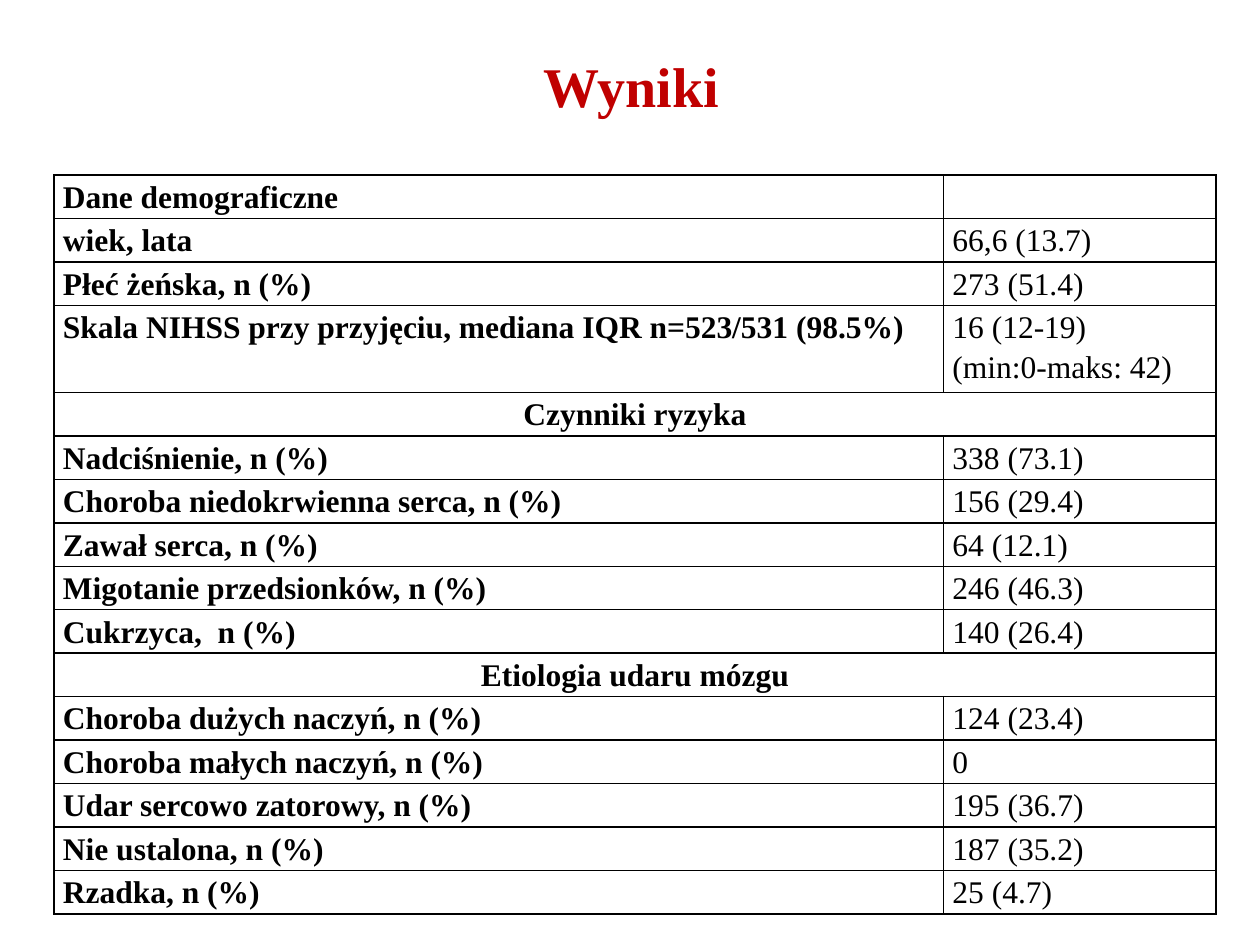
from lxml import etree
from pptx import Presentation
from pptx.dml.color import RGBColor
from pptx.enum import text
from pptx.oxml.ns import qn
from pptx.util import Inches, Pt

FONT = "Times New Roman"
RED = RGBColor(0xC0, 0x00, 0x00)
BLACK = RGBColor(0, 0, 0)
WHITE = RGBColor(0xFF, 0xFF, 0xFF)
ROW_HEIGHT = 0.345

ROWS = [
    ("Dane demograficzne", ""),
    ("wiek, lata", "66,6 (13.7)"),
    ("Płeć żeńska, n (%)", "273 (51.4)"),
    ("Skala NIHSS przy przyjęciu, mediana IQR n=523/531 (98.5%)",
     "16 (12-19)\n(min:0-maks: 42)"),
    ("Czynniki ryzyka", None),
    ("Nadciśnienie, n (%)", "338 (73.1)"),
    ("Choroba niedokrwienna serca, n (%)", "156 (29.4)"),
    ("Zawał serca, n (%)", "64 (12.1)"),
    ("Migotanie przedsionków, n (%)", "246 (46.3)"),
    ("Cukrzyca,  n (%)", "140 (26.4)"),
    ("Etiologia udaru mózgu", None),
    ("Choroba dużych naczyń, n (%)", "124 (23.4)"),
    ("Choroba małych naczyń, n (%)", "0"),
    ("Udar sercowo zatorowy, n (%)", "195 (36.7)"),
    ("Nie ustalona, n (%)", "187 (35.2)"),
    ("Rzadka, n (%)", "25 (4.7)"),
]


def style_run(r, size, color, bold):
    r.font.name = FONT
    r.font.size = Pt(size)
    r.font.bold = bold
    r.font.color.rgb = color


def add_borders(cell):
    tcPr = cell._tc.get_or_add_tcPr()
    for i, side in enumerate(("a:lnL", "a:lnR", "a:lnT", "a:lnB")):
        ln = etree.Element(qn(side), w=str(Pt(1)))
        fill = etree.SubElement(ln, qn("a:solidFill"))
        etree.SubElement(fill, qn("a:srgbClr"), val=str(BLACK))
        tcPr.insert(i, ln)


prs = Presentation()
prs.slide_width, prs.slide_height = Inches(10), Inches(7.5)
s = prs.slides.add_slide(prs.slide_layouts[5])

title = s.shapes.title
title.left, title.top = Inches(0.51), Inches(0.36)
title.width, title.height = Inches(9), Inches(1.25)
tf = title.text_frame
tf.text = "Wyniki"
tf.vertical_anchor = text.MSO_ANCHOR.TOP
tf.paragraphs[0].alignment = text.PP_ALIGN.CENTER
style_run(tf.paragraphs[0].runs[0], 32, RED, True)

table = s.shapes.add_table(len(ROWS), 2, Inches(0.43), Inches(1.39),
                           Inches(9.22), Inches(5.87)).table
table.first_row = table.horz_banding = False
table.columns[0].width, table.columns[1].width = Inches(7.06), Inches(2.16)

for i, (label, value) in enumerate(ROWS):
    lines = (value or "").count("\n") + 1
    table.rows[i].height = Inches(ROW_HEIGHT * lines)
    for j, content in enumerate((label, value or "")):
        cell = table.cell(i, j)
        cell.margin_left = cell.margin_right = Inches(0.07)
        cell.margin_top = cell.margin_bottom = 0
        cell.fill.solid()
        cell.fill.fore_color.rgb = WHITE
        add_borders(cell)
        cell.text_frame.text = content
        for p in cell.text_frame.paragraphs:
            p.line_spacing = 1.15
            if value is None:
                p.alignment = text.PP_ALIGN.CENTER
            for r in p.runs:
                style_run(r, 18, BLACK, j == 0)
    if value is None:
        table.cell(i, 0).merge(table.cell(i, 1))

prs.save("out.pptx")
